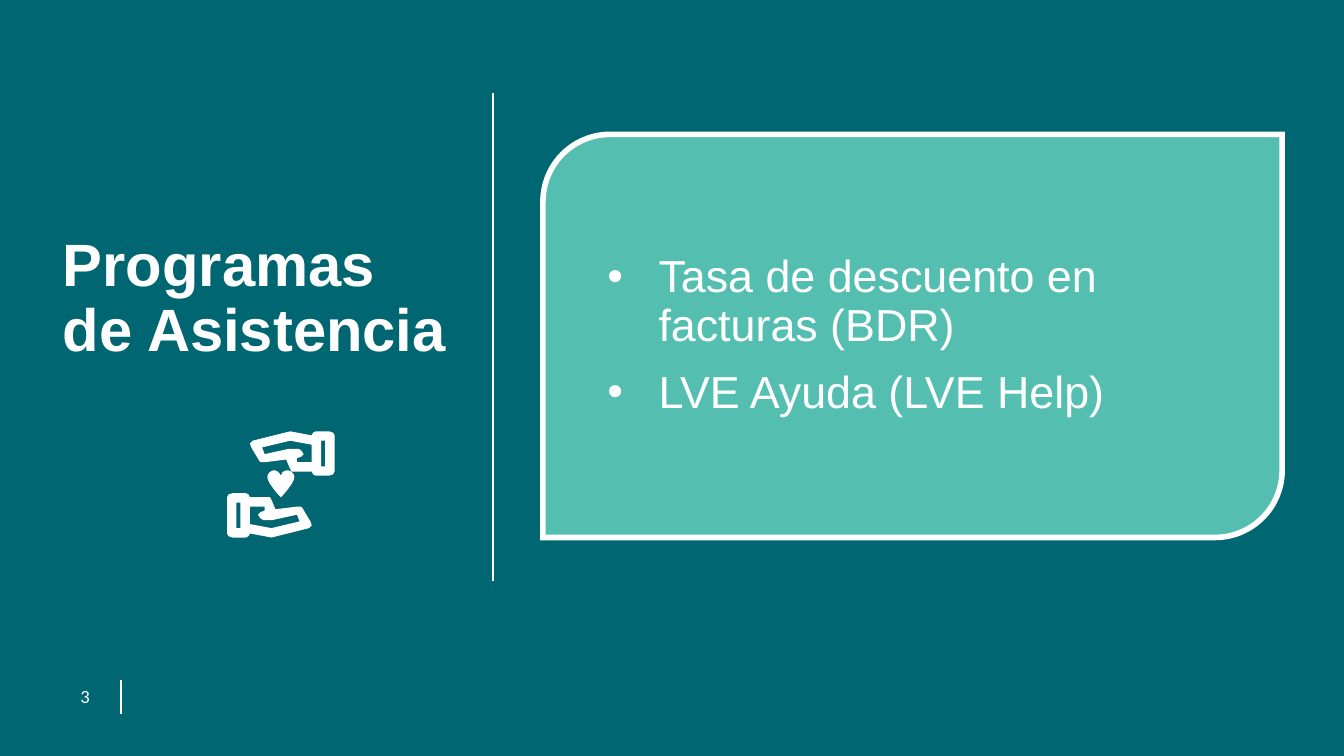
from lxml import etree
from pptx import Presentation
from pptx import util as u
from pptx.dml.color import RGBColor
from pptx.enum import shapes, text
from pptx.oxml.ns import qn

WIDTH = 10
HEIGHT = WIDTH * 9 / 16
COLORS = {"background": "006671", "card": "58C3B4", "light": "FFFFFF"}
CARD_TOP, CARD_HEIGHT = 1, 3
UNITS_PER_INCH = 1000
ICON_CENTER = (2.09, 3.605)

# Lower hand: outline, cuff opening and palm opening, in inches
HAND = [
    [(2.25, 3.78), (2.24, 3.77), (2.21, 3.77), (2.05, 3.79), (2.02, 3.72),
     (2.01, 3.7), (1.99, 3.7), (1.86, 3.7), (1.85, 3.68), (1.83, 3.67),
     (1.73, 3.67), (1.7, 3.68), (1.69, 3.7), (1.69, 3.97), (1.7, 3.99),
     (1.73, 4), (1.83, 4), (1.85, 3.99), (1.86, 3.97), (2.02, 4),
     (2.3, 3.93), (2.32, 3.91), (2.31, 3.88)],
    [(1.76, 3.93), (1.76, 3.74), (1.79, 3.74), (1.79, 3.93)],
    [(2.02, 3.93), (1.86, 3.9), (1.86, 3.77), (1.97, 3.77), (1.97, 3.8),
     (1.94, 3.81), (1.92, 3.83), (1.94, 3.86), (1.96, 3.87), (2.03, 3.87),
     (2.21, 3.83), (2.23, 3.88)],
]
# Heart: Bezier curves, each starting where the last one ends
HEART_START = (2.19, 3.55)
HEART = [
    [(2.19, 3.52), (2.16, 3.5), (2.14, 3.5)],
    [(2.11, 3.5), (2.09, 3.52), (2.09, 3.55)],
    [(2.09, 3.52), (2.06, 3.5), (2.04, 3.5)],
    [(2.02, 3.5), (1.99, 3.52), (1.99, 3.55)],
    [(1.99, 3.6), (2.09, 3.7), (2.09, 3.7)],
    [(2.09, 3.7), (2.19, 3.6), (2.19, 3.55)],
]


def color(name):
    return RGBColor.from_string(COLORS[name])


def add_rule(slide, x, top, bottom, width):
    rule = slide.shapes.add_connector(
        shapes.MSO_CONNECTOR.STRAIGHT,
        u.Inches(x), u.Inches(top), u.Inches(x), u.Inches(bottom))
    rule.line.color.rgb = color("light")
    rule.line.width = u.Pt(width)
    etree.SubElement(rule._element.spPr, qn("a:effectLst"))


def add_card(slide, left, width):
    card = slide.shapes.add_shape(
        shapes.MSO_SHAPE.ROUND_2_DIAG_RECTANGLE,
        u.Inches(left), u.Inches(CARD_TOP), u.Inches(width), u.Inches(CARD_HEIGHT))
    card.shadow.inherit = False
    card.fill.solid()
    card.fill.fore_color.rgb = color("card")
    properties = card._element.spPr
    etree.SubElement(properties.find(qn("a:solidFill"))[0], qn("a:alpha"), val="96000")
    card.line.color.rgb = color("light")
    card.line.width = u.Pt(3)
    etree.SubElement(properties.find(qn("a:ln")), qn("a:miter"), lim="800000")


def add_text(slide, box, lines, size, font="Arial", bold=False, bullet=False,
             insets=(0.1, 0.05, 0.1, 0.05), anchor=text.MSO_ANCHOR.MIDDLE,
             line_spacing=0.9):
    frame = slide.shapes.add_textbox(*map(u.Inches, box)).text_frame
    frame.word_wrap = True
    frame.vertical_anchor = anchor
    (frame.margin_left, frame.margin_top,
     frame.margin_right, frame.margin_bottom) = map(u.Inches, insets)
    frame.text = "\n".join(lines)
    for index, paragraph in enumerate(frame.paragraphs):
        paragraph.line_spacing = line_spacing
        paragraph.space_before = u.Pt(10 if index else 0)
        if bullet:
            properties = paragraph._p.get_or_add_pPr()
            properties.set("marL", str(u.Inches(0.38)))
            properties.set("indent", str(u.Inches(-0.38)))
            etree.SubElement(properties, qn("a:buFont"), typeface="Arial")
            etree.SubElement(properties, qn("a:buChar"), char="•")
        for run in paragraph.runs:
            run.font.name = font
            run.font.size = u.Pt(size)
            run.font.bold = bold
            run.font.color.rgb = color("light")


def add_outline(slide, contours):
    first, *others = [[(x * UNITS_PER_INCH, y * UNITS_PER_INCH) for x, y in contour]
                      for contour in contours]
    builder = slide.shapes.build_freeform(*first[0], scale=u.Inches(1) / UNITS_PER_INCH)
    builder.add_line_segments(first[1:], close=True)
    for contour in others:
        builder.move_to(*contour[0])
        builder.add_line_segments(contour[1:], close=True)
    outline = builder.convert_to_shape()
    outline.shadow.inherit = False
    outline.fill.solid()
    outline.fill.fore_color.rgb = color("light")
    outline.line.fill.background()


def half_turn(contours):
    center_x, center_y = ICON_CENTER
    return [[(2 * center_x - x, 2 * center_y - y) for x, y in contour]
            for contour in contours]


def curve_points(start, curves, steps=8):
    points = [start]
    for curve in curves:
        controls = [points[-1], *curve]
        for step in range(1, steps + 1):
            t = step / steps
            weights = ((1 - t) ** 3, 3 * t * (1 - t) ** 2, 3 * t * t * (1 - t), t ** 3)
            points.append(tuple(sum(weight * point[axis]
                                    for weight, point in zip(weights, controls))
                                for axis in (0, 1)))
    return points


def main():
    presentation = Presentation()
    presentation.slide_width = u.Inches(WIDTH)
    presentation.slide_height = u.Inches(HEIGHT)
    slide = presentation.slides.add_slide(presentation.slide_layouts[6])
    slide.background.fill.solid()
    slide.background.fill.fore_color.rgb = color("background")

    # Page number and its rule
    add_text(slide, (0.5, 5.05, 0.42, 0.27), ["3"], 10, font="Calibri",
             anchor=text.MSO_ANCHOR.TOP, line_spacing=1)
    add_rule(slide, 0.09 * WIDTH, 0.9 * HEIGHT, 0.945 * HEIGHT, 0.75)

    # Title, divider and card
    add_text(slide, (0.37, CARD_TOP, 3.08, CARD_HEIGHT), ["Programas de Asistencia"],
             32, bold=True, insets=(0.1, 0.05, 0.1, 0.59))
    add_rule(slide, 3.67, 0.69, 4.32, 1)
    add_card(slide, 4.04, 5.5)
    add_text(slide, (4.12, CARD_TOP, 5.26, CARD_HEIGHT),
             ["Tasa de descuento en facturas (BDR)", "LVE Ayuda (LVE Help)"],
             24, bullet=True, insets=(0.4, 0.2, 0.4, 0.2))

    # Helping hands icon
    add_outline(slide, HAND)
    add_outline(slide, half_turn(HAND))
    add_outline(slide, [curve_points(HEART_START, HEART)])

    presentation.save("out.pptx")


if __name__ == "__main__":
    main()
